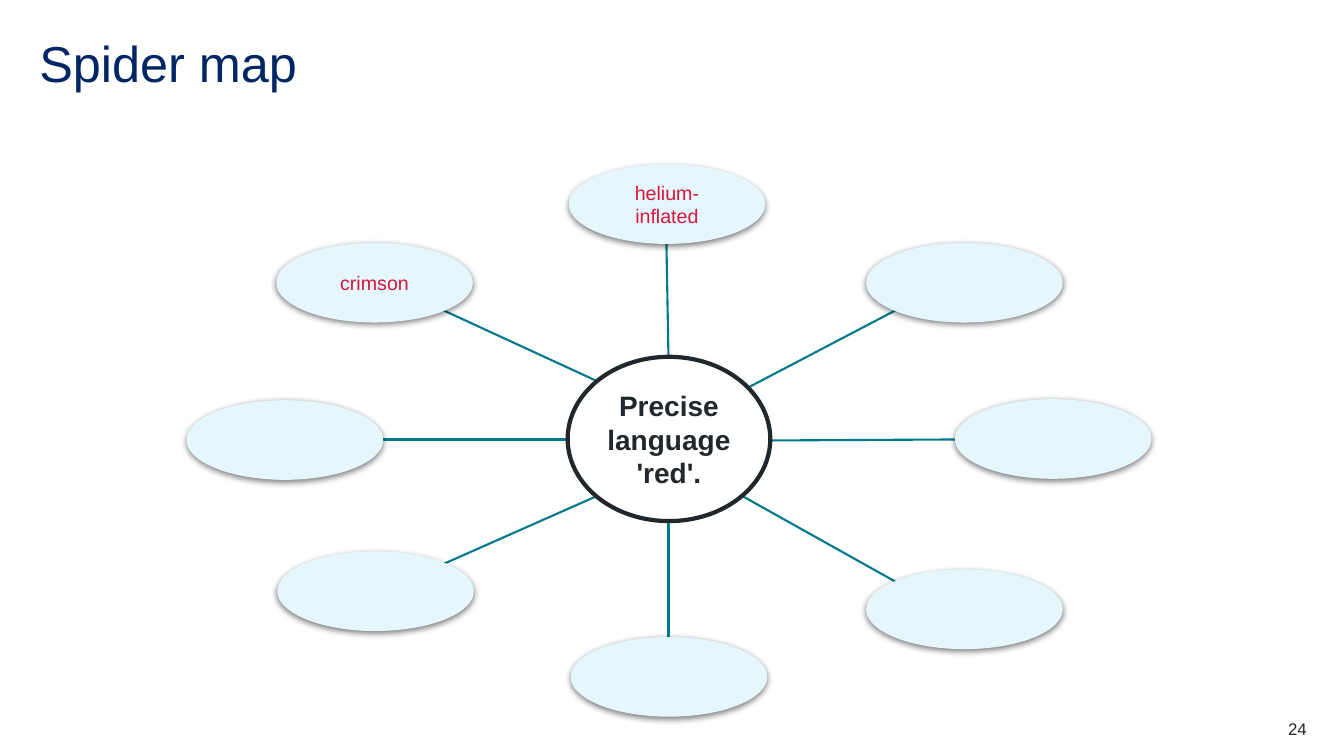
from dataclasses import dataclass

from lxml import etree
from pptx import Presentation
from pptx.dml.color import RGBColor
from pptx.enum.shapes import MSO_CONNECTOR, MSO_SHAPE
from pptx.enum.text import MSO_ANCHOR, PP_ALIGN
from pptx.oxml import parse_xml
from pptx.oxml.ns import qn
from pptx.shapes.autoshape import Shape
from pptx.slide import Slide
from pptx.util import Emu, Pt

STRAIGHT = MSO_CONNECTOR.STRAIGHT
OVAL = MSO_SHAPE.OVAL
TOP, MIDDLE = MSO_ANCHOR.TOP, MSO_ANCHOR.MIDDLE
LEFT, CENTER, RIGHT = PP_ALIGN.LEFT, PP_ALIGN.CENTER, PP_ALIGN.RIGHT

EMU_PER_PX = 9144
SLIDE_WIDTH, SLIDE_HEIGHT = 1333, 750
NODE_WIDTH, NODE_HEIGHT = 195, 79
FONT = "Arial"
NAVY, INK, RED = "002664", "22272B", "D7153A"
TEAL, PALE_BLUE, WHITE = "007A8A", "E5F7FC", "FFFFFF"
SHADOW_XML = (
    '<a:outerShdw xmlns:a="http://schemas.openxmlformats.org/drawingml/2006/main" '
    'blurRad="57150" dist="19050" dir="5400000" algn="ctr" rotWithShape="0">'
    '<a:srgbClr val="000000"><a:alpha val="50000"/></a:srgbClr></a:outerShdw>'
)


@dataclass(frozen=True)
class Node:
    """An outer bubble and the two ends of its spoke."""

    left: int
    top: int
    hub_end: tuple[int, int]
    node_end: tuple[int, int]
    text: str = ""


NODES = (
    Node(274, 241, (592, 378), (440, 308), "crimson"),
    Node(564, 163, (663, 354), (661, 242), "helium-inflated"),
    Node(859, 241, (741, 385), (888, 308)),
    Node(947, 396, (764, 437), (947, 436)),
    Node(859, 565, (736, 492), (888, 577)),
    Node(566, 632, (663, 517), (663, 632)),
    Node(275, 547, (590, 493), (441, 559)),
    Node(185, 397, (563, 436), (379, 436)),
)


def px(length: int) -> Emu:
    """Turn px into EMU."""
    return Emu(length * EMU_PER_PX)


def color(value: str) -> RGBColor:
    """Turn a hex string into a colour."""
    return RGBColor.from_string(value)


def write(shape: Shape, text: str, size: int, ink: str, alignment: PP_ALIGN,
          anchor: MSO_ANCHOR = MIDDLE, bold: bool = False,
          margins: tuple[int, int] = (9, 4), spacing: float = 1.0) -> None:
    """Put one styled paragraph in a shape."""
    frame = shape.text_frame
    frame.word_wrap = True
    frame.vertical_anchor = anchor
    frame.margin_left = frame.margin_right = px(margins[0])
    frame.margin_top = frame.margin_bottom = px(margins[1])
    paragraph = frame.paragraphs[0]
    paragraph.text = text
    paragraph.alignment = alignment
    paragraph.line_spacing = spacing
    paragraph.font.name = FONT
    paragraph.font.size = Pt(size)
    paragraph.font.bold = bold
    paragraph.font.color.rgb = color(ink)


def add_label(slide: Slide, box: tuple[int, int, int, int], text: str, size: int,
              ink: str, alignment: PP_ALIGN, spacing: float = 1.0) -> None:
    """Add a text box without margins."""
    label = slide.shapes.add_textbox(*map(px, box))
    write(label, text, size, ink, alignment, TOP, margins=(0, 0), spacing=spacing)


def add_oval(slide: Slide, box: tuple[int, int, int, int], fill: str) -> Shape:
    """Add a filled oval without a shadow."""
    oval = slide.shapes.add_shape(OVAL, *map(px, box))
    oval.shadow.inherit = False
    oval.fill.solid()
    oval.fill.fore_color.rgb = color(fill)
    return oval


def add_spoke(slide: Slide, node: Node) -> None:
    """Join the hub to a node."""
    spoke = slide.shapes.add_connector(STRAIGHT, *map(px, node.hub_end + node.node_end))
    spoke.line.color.rgb = color(TEAL)
    spoke.line.width = Pt(1.5)
    etree.SubElement(spoke.element.spPr, qn("a:effectLst"))


def add_hub(slide: Slide) -> None:
    """Add the central oval."""
    hub = add_oval(slide, (563, 354, 201, 163), WHITE)
    hub.line.color.rgb = color(INK)
    hub.line.width = Pt(3)
    write(hub, "Precise language 'red'.", 20, INK, CENTER, bold=True)


def add_node(slide: Slide, node: Node) -> None:
    """Add an outer bubble with a soft shadow."""
    bubble = add_oval(slide, (node.left, node.top, NODE_WIDTH, NODE_HEIGHT), PALE_BLUE)
    bubble.line.fill.background()
    bubble.element.spPr.find(qn("a:effectLst")).append(parse_xml(SHADOW_XML))
    if node.text:
        write(bubble, node.text, 14, RED, CENTER)


def main() -> None:
    """Build and save the spider map."""
    presentation = Presentation()
    presentation.slide_width = px(SLIDE_WIDTH)
    presentation.slide_height = px(SLIDE_HEIGHT)
    slide = presentation.slides.add_slide(presentation.slide_layouts[6])
    for node in NODES:
        add_spoke(slide, node)
    add_label(slide, (39, 39, 1102, 60), "Spider map", 36, NAVY, LEFT, spacing=0.9)
    add_hub(slide)
    for node in NODES:
        add_node(slide, node)
    add_label(slide, (1217, 713, 79, 20), "24", 12, INK, RIGHT)
    presentation.save("out.pptx")


if __name__ == "__main__":
    main()
